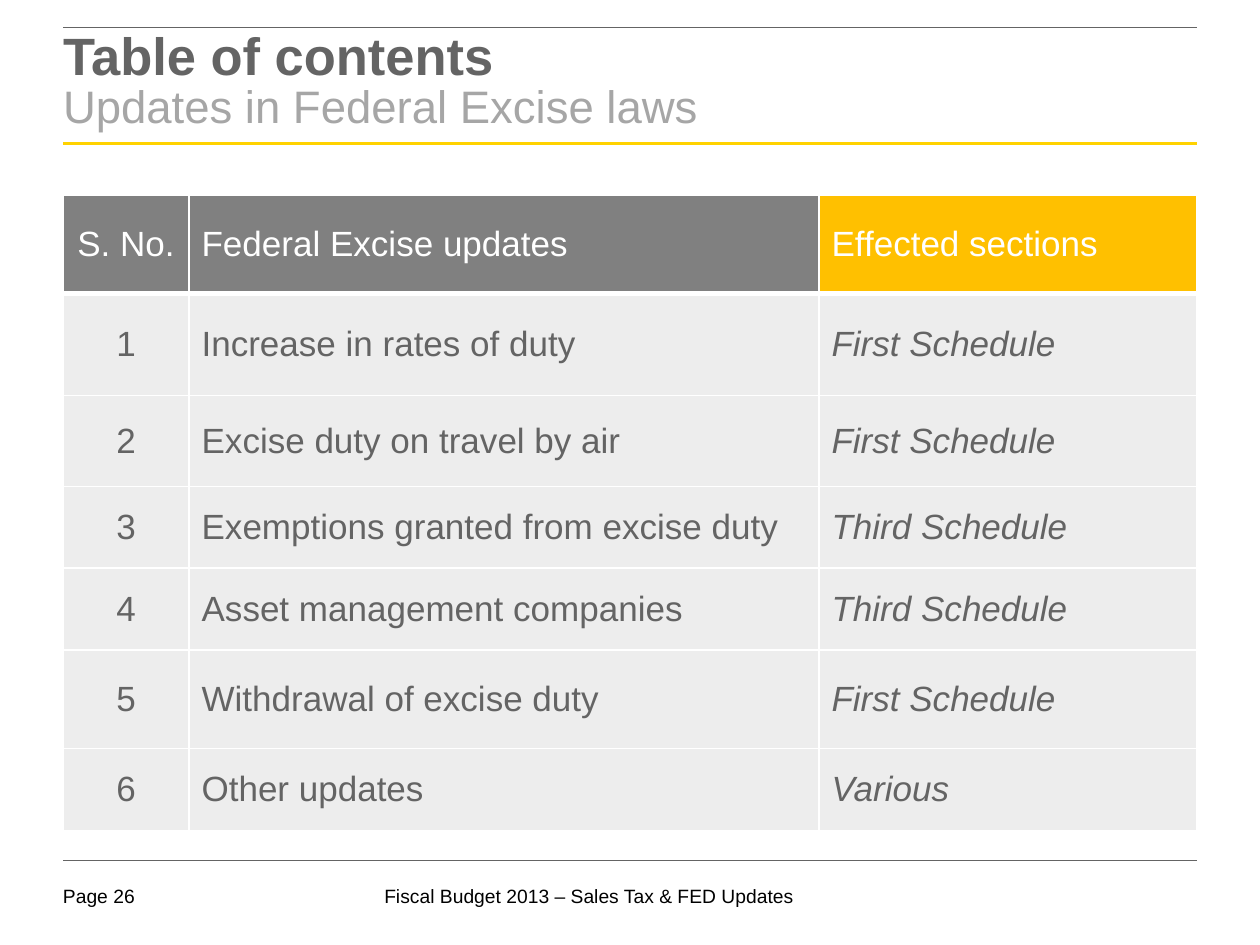
from dataclasses import dataclass

from lxml.etree import SubElement
from pptx import Presentation
from pptx.dml.color import RGBColor
from pptx.enum.shapes import MSO_CONNECTOR
from pptx.enum.text import MSO_ANCHOR, MSO_AUTO_SIZE, PP_ALIGN
from pptx.oxml.ns import qn
from pptx.util import Inches, Pt


@dataclass(frozen=True)
class Theme:
    font: str = "Arial"
    text: str = "646464"
    pale: str = "A6A6A6"
    black: str = "000000"
    white: str = "FFFFFF"
    head: str = "808080"
    accent: str = "FFC000"
    band: str = "EDEDED"
    gold: str = "FFD200"
    title: int = 30
    sub: int = 26
    body: int = 20
    foot: int = 11


@dataclass(frozen=True)
class Rule:
    row: float
    color: str
    weight: float


@dataclass(frozen=True)
class Note:
    col: float
    wide: float
    text: str


THEME = Theme()

# The slide is a grid of 10 columns by 7.5 rows
WIDTH, HEIGHT = Inches(10), Inches(7.5)
COL, ROW = WIDTH / 10, HEIGHT / 7.5
EDGE, SPAN = 0.5, 9

RULES = [
    Rule(1.14, THEME.gold, 1.5),
    Rule(6.83, THEME.text, 0.25),
    Rule(0.22, THEME.text, 0.5),
]
NOTES = [
    Note(3.05, 3.7, "Fiscal Budget 2013 – Sales Tax & FED Updates"),
    Note(EDGE, 0.73, "Page 26"),
]
HEADS = ["S. No.", "Federal Excise updates", "Effected sections"]
ITEMS = [
    ("Increase in rates of duty", "First Schedule"),
    ("Excise duty on travel by air", "First Schedule"),
    ("Exemptions granted from excise duty", "Third Schedule"),
    ("Asset management companies", "Third Schedule"),
    ("Withdrawal of excise duty", "First Schedule"),
    ("Other updates", "Various"),
]
WIDTHS = [1, 5, 3]
HEIGHTS = [0.78, 0.81, 0.72, 0.65, 0.65, 0.78, 0.65]


def cols(count: float) -> int:
    return round(count * COL)


def rows(count: float) -> int:
    return round(count * ROW)


def style(run, size: int, color: str, bold=False, slant=False) -> None:
    font = run.font
    font.name, font.size = THEME.font, Pt(size)
    font.bold, font.italic = bold, slant
    font.color.rgb = RGBColor.from_string(color)


def inset(frame, top: float = 0) -> None:
    frame.margin_left = frame.margin_right = frame.margin_bottom = 0
    frame.margin_top = rows(top)
    frame.word_wrap = True


def draw_rule(slide, rule: Rule) -> None:
    line = slide.shapes.add_connector(
        MSO_CONNECTOR.STRAIGHT, cols(EDGE), rows(rule.row),
        cols(EDGE + SPAN), rows(rule.row))
    line.line.color.rgb = RGBColor.from_string(rule.color)
    line.line.width = Pt(rule.weight)
    SubElement(line._element.spPr, qn("a:effectLst"))


def draw_note(slide, note: Note) -> None:
    box = slide.shapes.add_textbox(
        cols(note.col), rows(7.02), cols(note.wide), rows(0.22))
    frame = box.text_frame
    inset(frame)
    frame.text = note.text
    style(frame.paragraphs[0].runs[0], THEME.foot, THEME.black)


def draw_title(slide, main: str, sub: str) -> None:
    title = slide.shapes.title
    title.left, title.top = cols(EDGE), rows(0.22)
    title.width, title.height = cols(SPAN), rows(0.94)
    frame = title.text_frame
    inset(frame, 0.04)
    frame.auto_size = MSO_AUTO_SIZE.NONE
    frame.vertical_anchor = MSO_ANCHOR.TOP
    frame.text = f"{main}\v{sub}"
    para = frame.paragraphs[0]
    para.alignment, para.line_spacing = PP_ALIGN.LEFT, 0.85
    first, second = para.runs
    style(first, THEME.title, THEME.text, bold=True)
    style(second, THEME.sub, THEME.pale)


def border(cell, top: float, base: float) -> None:
    props = cell._tc.get_or_add_tcPr()
    for side, weight in zip("LRTB", (1, 1, top, base)):
        line = SubElement(props, qn(f"a:ln{side}"), w=str(Pt(weight)))
        fill = SubElement(line, qn("a:solidFill"))
        SubElement(fill, qn("a:srgbClr"), val=THEME.white)


def draw_cell(cell, text: str, row: int, col: int) -> None:
    head, last = row == 0, col == len(WIDTHS) - 1
    border(cell, 3 if row == 1 else 1, 3 if head else 1)
    shade = (THEME.accent if last else THEME.head) if head else THEME.band
    cell.fill.solid()
    cell.fill.fore_color.rgb = RGBColor.from_string(shade)
    cell.vertical_anchor = MSO_ANCHOR.MIDDLE
    cell.text_frame.text = text
    para = cell.text_frame.paragraphs[0]
    para.alignment = PP_ALIGN.LEFT if col else PP_ALIGN.CENTER
    style(para.runs[0], THEME.body, THEME.white if head else THEME.text,
          slant=last and not head)


def draw_table(slide) -> None:
    data = [HEADS] + [(str(n), *item) for n, item in enumerate(ITEMS, 1)]
    table = slide.shapes.add_table(
        len(data), len(WIDTHS), cols(EDGE), rows(1.55),
        cols(SPAN), rows(sum(HEIGHTS))).table
    for column, wide in zip(table.columns, WIDTHS):
        column.width = cols(wide)
    for line, high in zip(table.rows, HEIGHTS):
        line.height = rows(high)
    for r, texts in enumerate(data):
        for c, text in enumerate(texts):
            draw_cell(table.cell(r, c), text, r, c)


def main() -> None:
    deck = Presentation()
    deck.slide_width, deck.slide_height = WIDTH, HEIGHT
    slide = deck.slides.add_slide(deck.slide_layouts[5])

    # Footer and rules
    for note in NOTES:
        draw_note(slide, note)
    for rule in RULES:
        draw_rule(slide, rule)

    # Heading and contents
    draw_title(slide, "Table of contents", "Updates in Federal Excise laws")
    draw_table(slide)
    deck.save("out.pptx")


if __name__ == "__main__":
    main()
